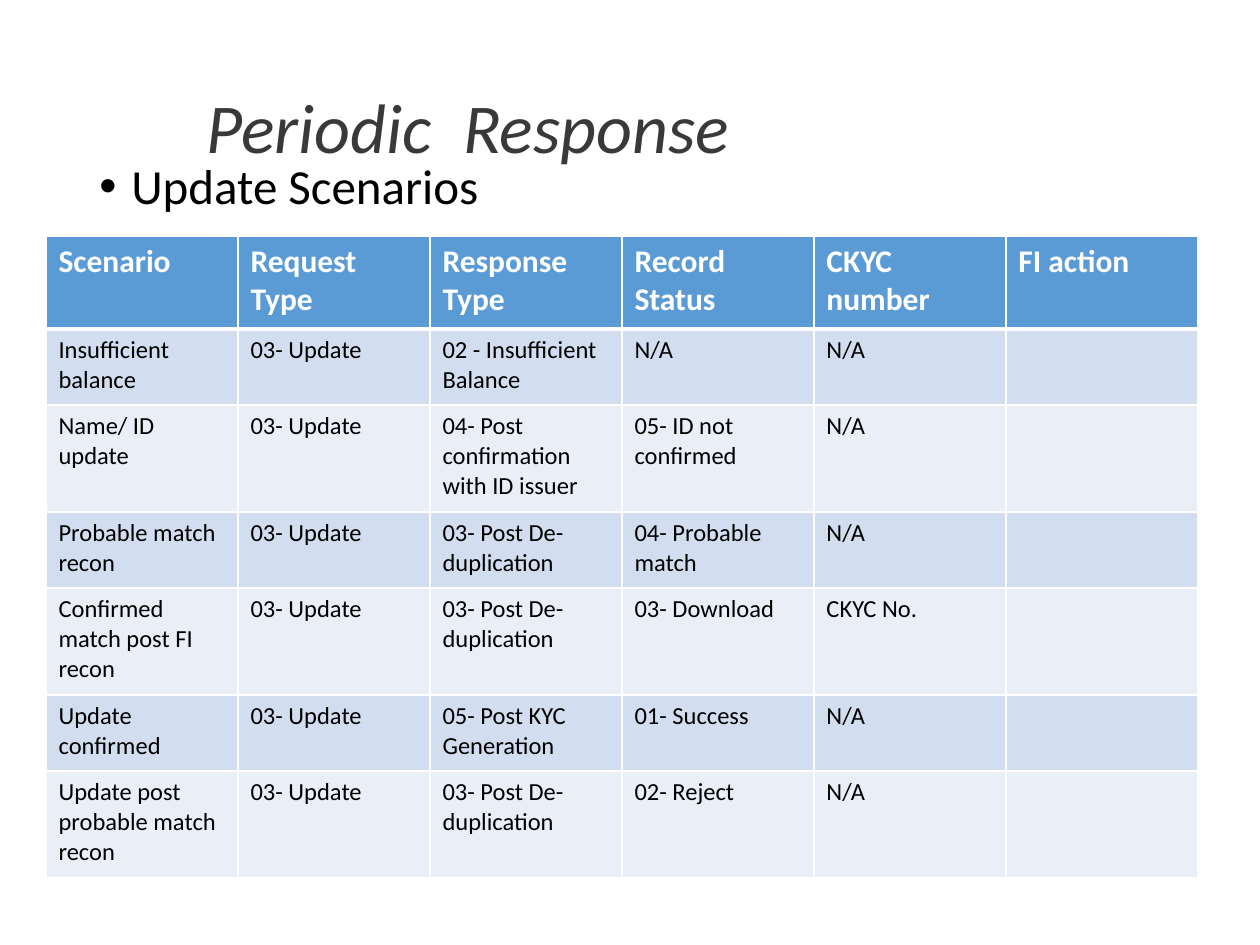
from lxml import etree
from pptx import Presentation
from pptx.dml.color import RGBColor
from pptx.enum.text import MSO_ANCHOR
from pptx.oxml.ns import qn
from pptx.util import Emu, Pt

MIDDLE = MSO_ANCHOR.MIDDLE
BLANK_LAYOUT = 6
PX_PER_INCH = 126
FONT = "Calibri"
WHITE, BLACK, DARK_GREY = "FFFFFF", "000000", "3B3838"
HEADER_FILL, BANDS = "5B9BD5", ("D2DEEF", "EAEFF7")

HEADER = ("Scenario", "Request Type", "Response Type", "Record Status",
          "CKYC number", "FI action")
REQUEST = "03- Update"
DEDUPLICATION = "03- Post De- duplication"
SCENARIOS = (
    ("Insufficient balance", REQUEST, "02 - Insufficient Balance", "N/A", "N/A", ""),
    ("Name/ ID update", REQUEST, "04- Post confirmation with ID issuer",
     "05- ID not confirmed", "N/A", ""),
    ("Probable match recon", REQUEST, DEDUPLICATION, "04- Probable match", "N/A", ""),
    ("Confirmed match post FI recon", REQUEST, DEDUPLICATION, "03- Download",
     "CKYC No.", ""),
    ("Update confirmed", REQUEST, "05- Post KYC Generation", "01- Success", "N/A", ""),
    ("Update post probable match recon", REQUEST, DEDUPLICATION, "02- Reject",
     "N/A", ""),
)
COLUMN_WIDTH = 192
HEADER_HEIGHT, ROW_HEIGHTS = 93, (76, 107)


def px(length):
    return Emu(round(length * 914400 / PX_PER_INCH))


def color(value):
    return RGBColor.from_string(value)


def style(font, size, fill, bold=False, italic=False):
    font.name = FONT
    font.size = Pt(size)
    font.color.rgb = color(fill)
    font.bold = bold
    font.italic = italic


def add_text(page, left, top, width, height, text):
    box = page.shapes.add_textbox(px(left), px(top), px(width), px(height))
    frame = box.text_frame
    frame.word_wrap = True
    frame.text = text
    frame.paragraphs[0].line_spacing = 0.9
    return frame


def add_bullet(para, indent):
    properties = para._p.get_or_add_pPr()
    properties.set("marL", str(px(indent)))
    properties.set("indent", str(-px(indent)))
    font = etree.SubElement(properties, qn("a:buFont"))
    font.set("typeface", "Arial")
    etree.SubElement(properties, qn("a:buChar")).set("char", "•")


def set_borders(cell, top, bottom):
    properties = cell._tc.get_or_add_tcPr()
    for side, width in (("L", 1), ("R", 1), ("T", top), ("B", bottom)):
        line = etree.SubElement(properties, qn(f"a:ln{side}"))
        line.set("w", str(Pt(width)))
        fill = etree.SubElement(line, qn("a:solidFill"))
        etree.SubElement(fill, qn("a:srgbClr")).set("val", WHITE)


def fill_cell(cell, text, row):
    is_header = row == 0
    # A thick rule separates the header from the first scenario
    set_borders(cell, top=3 if row == 1 else 1, bottom=3 if is_header else 1)
    cell.fill.solid()
    cell.fill.fore_color.rgb = color(HEADER_FILL if is_header else BANDS[(row - 1) % 2])
    cell.text = text
    for span in cell.text_frame.paragraphs[0].runs:
        if is_header:
            style(span.font, 18, WHITE, bold=True)
        else:
            style(span.font, 14, BLACK)


def add_scenario_table(page, left, top):
    rows = (HEADER,) + SCENARIOS
    heights = [HEADER_HEIGHT] + [ROW_HEIGHTS[i % 2] for i in range(len(SCENARIOS))]
    table = page.shapes.add_table(
        len(rows), len(HEADER), px(left), px(top),
        px(COLUMN_WIDTH * len(HEADER)), px(sum(heights))).table
    for column in table.columns:
        column.width = px(COLUMN_WIDTH)
    for row, (texts, height) in enumerate(zip(rows, heights)):
        table.rows[row].height = px(height)
        for column, text in enumerate(texts):
            fill_cell(table.cell(row, column), text, row)


def main():
    deck = Presentation()
    deck.slide_width, deck.slide_height = px(1260), px(945)
    page = deck.slides.add_slide(deck.slide_layouts[BLANK_LAYOUT])

    # Title
    title = add_text(page, 194, 84, 1004, 93, "Periodic  Response")
    title.vertical_anchor = MIDDLE
    style(title.paragraphs[0].runs[0].font, 40, DARK_GREY, italic=True)

    # Bulleted heading
    heading = add_text(page, 87, 156, 1086, 696, "Update Scenarios").paragraphs[0]
    add_bullet(heading, 32)
    style(heading.runs[0].font, 28, BLACK)

    # Scenarios
    add_scenario_table(page, 46, 236)

    deck.save("out.pptx")


if __name__ == "__main__":
    main()
